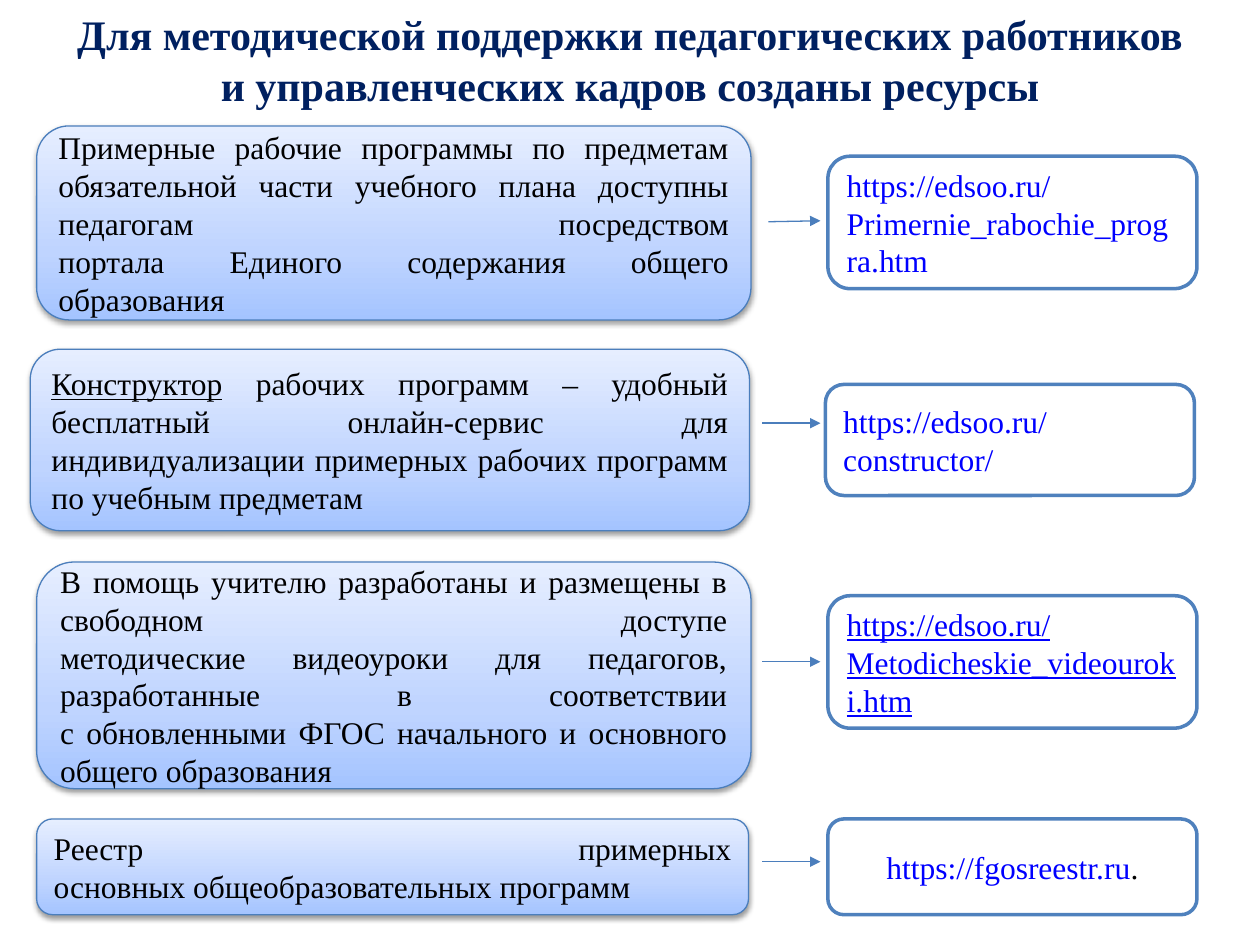
from copy import deepcopy

from lxml import etree
from pptx import Presentation
from pptx import util as u
from pptx.dml.color import RGBColor
from pptx.enum import shapes, text
from pptx.oxml import ns

COLORS = {
    "title": "002060", "body": "000000", "link": "0000FF", "white": "FFFFFF",
    "edge": "4B7EBC", "frame": "4F81BD", "shadow": "000000",
    "deep": "A4C4FF", "mid": "BFD4FF", "pale": "E6EEFF",
}

TITLE = ["Для методической поддержки педагогических работников",
         "и управленческих кадров созданы ресурсы"]

RESOURCES = [
    {"about": [("Примерные рабочие программы по предметам обязательной части учебного плана "
                "доступны педагогам посредством\nпортала Единого содержания общего образования", {})],
     "card": (0.74, 2.54, 14.4, 3.91),
     "address": [("https://edsoo.ru/Primernie_rabochie_progra.htm", {})],
     "box": (16.69, 3.15, 7.44, 2.67),
     "arrow": (15.49, 4.47, 16.54, 4.45)},
    {"about": [("Конструктор", {"underline": True}),
               (" рабочих программ – удобный бесплатный онлайн-сервис для индивидуализации "
                "примерных рабочих программ по учебным предметам", {})],
     "card": (0.61, 7.04, 14.5, 3.66),
     "address": [("https://edsoo.ru/constructor/", {})],
     "box": (16.64, 7.75, 7.44, 2.24),
     "arrow": (15.37, 8.53, 16.54, 8.53)},
    {"about": [("В помощь учителю разработаны и размещены в свободном доступе\n"
                "методические видеоуроки для педагогов, разработанные в соответствии\n"
                "с обновленными ФГОС начального и основного общего образования", {})],
     "card": (0.74, 11.33, 14.4, 4.57),
     "address": [("https://edsoo.ru/Metodicheskie_videouroki.htm", {"underline": True})],
     "box": (16.69, 12.01, 7.44, 2.67),
     "arrow": (15.37, 13.34, 16.54, 13.34)},
    {"about": [("Реестр примерных\nосновных общеобразовательных программ", {})],
     "card": (0.74, 16.51, 14.35, 1.93),
     "address": [("https://fgosreestr.ru", {}), (".", {"color": "body"})],
     "box": (16.69, 16.51, 7.44, 1.93),
     "address_align": text.PP_ALIGN.CENTER,
     "arrow": (15.37, 17.37, 16.54, 17.37)},
]


def rgb(name):
    return RGBColor.from_string(COLORS[name])


def cm(values):
    return [u.Cm(value) for value in values]


def write(paragraph, wording, size=18, color="body", bold=False, underline=False):
    for number, line in enumerate(wording.split("\n")):
        if number:
            paragraph.add_line_break()
        run = paragraph.add_run()
        run.text = line
        run.font.name = "Times New Roman"
        run.font.size = u.Pt(size)
        run.font.bold = bold
        run.font.underline = underline
        run.font.color.rgb = rgb(color)


def add_title(slide):
    frame = slide.shapes.add_textbox(*cm((0, 0.05, 25.4, 2.31))).text_frame
    frame.word_wrap = True
    for number, line in enumerate(TITLE):
        paragraph = frame.add_paragraph() if number else frame.paragraphs[0]
        paragraph.alignment = text.PP_ALIGN.CENTER
        write(paragraph, line, size=24, color="title", bold=True)


def add_rounded(slide, place, parts, edge, weight, align=text.PP_ALIGN.JUSTIFY, color="body"):
    panel = slide.shapes.add_shape(shapes.MSO_SHAPE.ROUNDED_RECTANGLE, *cm(place))
    panel.shadow.inherit = False
    panel.line.color.rgb = rgb(edge)
    panel.line.width = u.Pt(weight)
    frame = panel.text_frame
    frame.word_wrap = True
    frame.vertical_anchor = text.MSO_ANCHOR.MIDDLE
    paragraph = frame.paragraphs[0]
    paragraph.alignment = align
    for wording, style in parts:
        write(paragraph, wording, **{"color": color, **style})
    return panel


def shade(card):
    card.fill.gradient()
    card.fill.gradient_angle = 90
    stop_list = card._element.spPr.find(".//" + ns.qn("a:gsLst"))
    stop_list.insert(1, deepcopy(stop_list[0]))
    stops = zip(card.fill.gradient_stops, (0, 0.35, 1), ("deep", "mid", "pale"))
    for stop, position, color in stops:
        stop.position = position
        stop.color.rgb = rgb(color)


def cast_shadow(card):
    effects = card._element.spPr.find(ns.qn("a:effectLst"))
    outer = etree.SubElement(effects, ns.qn("a:outerShdw"), blurRad="40000", dist="20000",
                             dir="5400000", rotWithShape="0")
    tint = etree.SubElement(outer, ns.qn("a:srgbClr"), val=COLORS["shadow"])
    etree.SubElement(tint, ns.qn("a:alpha"), val="38000")


def add_card(slide, place, parts):
    card = add_rounded(slide, place, parts, "edge", 0.75)
    shade(card)
    cast_shadow(card)


def add_address(slide, place, parts, align):
    box = add_rounded(slide, place, parts, "frame", 2, align, "link")
    box.fill.solid()
    box.fill.fore_color.rgb = rgb("white")


def add_arrow(slide, ends):
    arrow = slide.shapes.add_connector(shapes.MSO_CONNECTOR.STRAIGHT, *cm(ends))
    arrow.line.color.rgb = rgb("edge")
    arrow.line.width = u.Pt(0.75)
    etree.SubElement(arrow.line._get_or_add_ln(), ns.qn("a:tailEnd"), type="triangle")
    etree.SubElement(arrow._element.spPr, ns.qn("a:effectLst"))


def main():
    deck = Presentation()
    deck.slide_width, deck.slide_height = cm((25.4, 19.05))
    slide = deck.slides.add_slide(deck.slide_layouts[6])
    add_title(slide)
    for resource in RESOURCES:
        add_card(slide, resource["card"], resource["about"])
        add_address(slide, resource["box"], resource["address"],
                    resource.get("address_align", text.PP_ALIGN.JUSTIFY))
        add_arrow(slide, resource["arrow"])
    deck.save("out.pptx")


if __name__ == "__main__":
    main()
